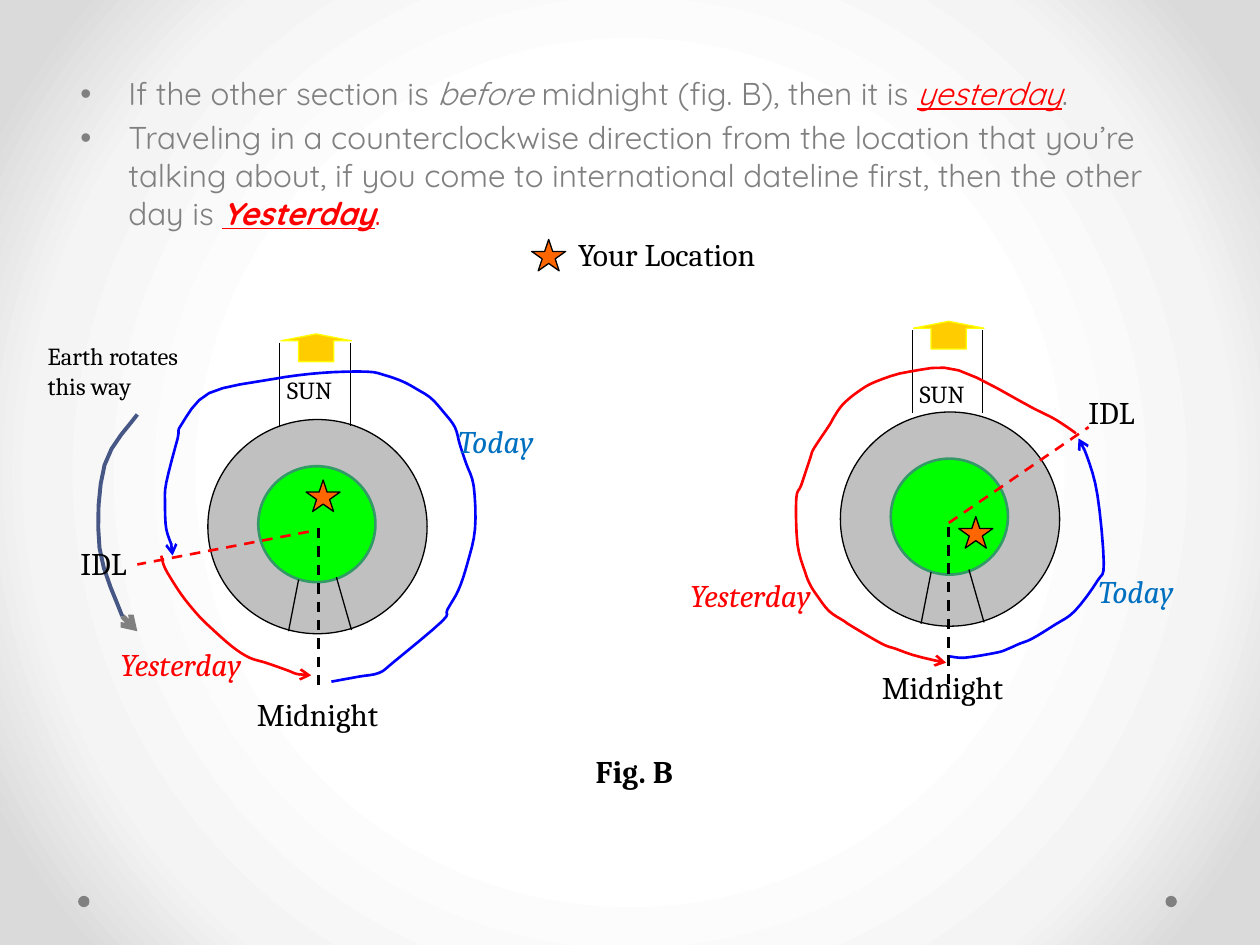
from pptx import Presentation
from pptx.dml.color import RGBColor
from pptx.enum.dml import MSO_LINE
from pptx.enum.shapes import MSO_CONNECTOR, MSO_SHAPE
from pptx.enum.text import MSO_AUTO_SIZE
from pptx.oxml import parse_xml
from pptx.oxml.ns import nsdecls, qn
from pptx.util import Inches, Pt
from lxml.etree import SubElement

hue = RGBColor.from_string


def pen(shape, color, width, dash=False, arrow=False):
    """Set the outline of a shape or connector."""
    shape.line.color.rgb = hue(color)
    shape.line.width = Pt(width)
    if dash:
        shape.line.dash_style = MSO_LINE.DASH
    props = shape._element.spPr
    if arrow:
        SubElement(props.find(qn("a:ln")), qn("a:tailEnd"), type="arrow")
    if props.find(qn("a:effectLst")) is None:
        SubElement(props, qn("a:effectLst"))


def write(para, text, size, font, color, bold=False, italic=False, under=False):
    """Add one run to a paragraph."""
    run = para.add_run()
    run.text = text
    run.font.size = Pt(size)
    run.font.name = font
    run.font.color.rgb = hue(color)
    run.font.bold, run.font.italic, run.font.underline = bold, italic, under


deck = Presentation()
deck.slide_width, deck.slide_height = Inches(10), Inches(7.5)
slide = deck.slides.add_slide(deck.slide_layouts[6])
shapes = slide.shapes

# Background: round gradient
stops = "".join(
    f'<a:gs pos="{pos}000"><a:srgbClr val="{color}"/></a:gs>'
    for pos, color in [(50, "FFFFFF"), (76, "F4F4F4"), (92, "DADADA")])
slide._element.cSld.insert(0, parse_xml(
    f'<p:bg {nsdecls("p", "a")}><p:bgPr><a:gradFill rotWithShape="1"><a:gsLst>{stops}</a:gsLst>'
    '<a:path path="circle"><a:fillToRect l="50000" t="50000" r="50000" b="50000"/></a:path>'
    '</a:gradFill><a:effectLst/></p:bgPr></p:bg>'))

# Corner dots, globes, sun arrows and stars
forms = [(MSO_SHAPE.OVAL, x, 7.11, 0.09, 0.09, "808080", None, 0) for x in (9.25, 0.62)]
globes = [(1.65, 3.33, 2.72), (6.67, 3.27, 2.62)]
for x, y, sun in globes:
    forms += [
        (MSO_SHAPE.OVAL, x, y, 1.74, 1.7, "C0C0C0", "000000", 0.75),
        (MSO_SHAPE.OVAL, x + 0.4, y + 0.37, 0.93, 0.92, "00FF00", "339966", 1.5),
        (MSO_SHAPE.UP_ARROW, x + 0.58, sun - 0.07, 0.56, 0.22, "FFCC00", "FFFF00", 0.75)]
for x, y in [(2.43, 3.81), (4.22, 1.9), (7.61, 4.1)]:
    forms.append((MSO_SHAPE.STAR_5_POINT, x, y, 0.27, 0.25, "FF6600", "000000", 0.75))
for kind, x, y, w, h, fill, edge, width in forms:
    form = shapes.add_shape(kind, Inches(x), Inches(y), Inches(w), Inches(h))
    form.shadow.inherit = False
    form.fill.solid()
    form.fill.fore_color.rgb = hue(fill)
    if edge:
        pen(form, edge, width)
    else:
        form.line.fill.background()
    if kind == MSO_SHAPE.UP_ARROW:
        form.adjustments[0], form.adjustments[1] = 0.5, 0.25

# Straight lines: sun beams, night sector, midnight, date line, rotation tip
lines = []
for x, y, sun in globes:
    for beam in (x + 0.57, x + 1.13):
        lines.append((beam, sun, beam, sun + 0.66, "000000", 0.75, False, False))
    lines += [(x + 0.72, y + 1.27, x + 0.64, y + 1.68, "000000", 0.75, False, False),
              (x + 1.02, y + 1.25, x + 1.14, y + 1.67, "000000", 0.75, False, False)]
lines += [
    (2.53, 4.19, 2.53, 5.44, "000000", 1.5, True, False),
    (7.53, 4.18, 7.53, 5.43, "000000", 1.5, True, False),
    (2.45, 4.22, 1.09, 4.48, "FF0000", 1.5, True, False),
    (7.53, 4.15, 8.64, 3.39, "FF0000", 1.5, True, False),
    (0.97, 4.89, 1.09, 5.01, "808080", 3, False, True)]
for x1, y1, x2, y2, color, width, dash, arrow in lines:
    line = shapes.add_connector(
        MSO_CONNECTOR.STRAIGHT, Inches(x1), Inches(y1), Inches(x2), Inches(y2))
    pen(line, color, width, dash, arrow)

# Day arcs and rotation arc, each a smooth path through its points
arcs = [
    ("FF0000", 1.5, True, [
        (1.28, 4.41), (1.31, 4.51), (1.4, 4.66), (1.47, 4.76), (1.57, 4.88), (1.66, 4.97),
        (1.84, 5.13), (1.98, 5.22), (2.11, 5.26), (2.28, 5.32), (2.36, 5.35), (2.47, 5.36)]),
    ("0000FF", 1.5, True, [
        (2.63, 5.41), (2.85, 5.37), (3.01, 5.34), (3.13, 5.25), (3.51, 4.93), (3.55, 4.84),
        (3.64, 4.68), (3.71, 4.47), (3.77, 4.2), (3.76, 3.86), (3.7, 3.68), (3.65, 3.53),
        (3.61, 3.39), (3.52, 3.27), (3.42, 3.16), (3.31, 3.09), (3.2, 3.03), (3.06, 2.98),
        (2.91, 2.95), (2.55, 2.96), (2.16, 3.01), (1.66, 3.12), (1.44, 3.37), (1.41, 3.48),
        (1.32, 3.83), (1.31, 4), (1.32, 4.2), (1.37, 4.35), (1.37, 4.41)]),
    ("475785", 2.25, False, [(1.09, 3.29), (0.83, 3.69), (0.79, 4.35), (0.97, 4.89)]),
    ("FF0000", 1.5, True, [
        (8.54, 3.44), (8.47, 3.39), (8.36, 3.32), (8.2, 3.24), (7.61, 2.94), (7.22, 2.95),
        (6.95, 3.03), (6.81, 3.11), (6.69, 3.21), (6.62, 3.31), (6.58, 3.38), (6.46, 3.56),
        (6.43, 3.64), (6.36, 3.85), (6.32, 3.96), (6.33, 4.32), (6.39, 4.54), (6.43, 4.64),
        (6.48, 4.72), (6.58, 4.85), (6.7, 4.93), (6.76, 4.97), (7, 5.11), (7.11, 5.15),
        (7.25, 5.2), (7.41, 5.24), (7.51, 5.26)]),
    ("0000FF", 1.5, True, [
        (7.54, 5.21), (7.66, 5.22), (7.91, 5.18), (8, 5.15), (8.09, 5.11), (8.19, 5.07),
        (8.37, 4.96), (8.53, 4.85), (8.71, 4.61), (8.76, 4.47), (8.71, 3.93), (8.63, 3.63),
        (8.56, 3.48)])]
for color, width, arrow, knots in arcs:
    ring = [knots[0]] + knots + [knots[-1]]
    spots = []
    for a, b, c, d in zip(ring, ring[1:], ring[2:], ring[3:]):
        for t in (0.25, 0.5, 0.75, 1):
            # Catmull-Rom spline
            spots.append([Inches(
                q + (r - p) * t / 2 + (2 * p - 5 * q + 4 * r - s) * t ** 2 / 2
                + (3 * q - p - 3 * r + s) * t ** 3 / 2) for p, q, r, s in zip(a, b, c, d)])
    pathway = shapes.build_freeform(Inches(knots[0][0]), Inches(knots[0][1]))
    pathway.add_line_segments(spots, close=False)
    arc = pathway.convert_to_shape()
    arc.shadow.inherit = False
    arc.fill.background()
    pen(arc, color, width, arrow=arrow)

# Bulleted rule
rule = shapes.add_textbox(Inches(0.54), Inches(0.54), Inches(9.01), Inches(1.37)).text_frame
rule.word_wrap = True
gray, red = "808080", "FF0000"
points = [
    [("If the other section is ", gray), ("before", gray, False, True),
     (" midnight (fig. B), then it is ", gray), ("yesterday", red, False, True, True),
     (".", gray)],
    [("Traveling in a counterclockwise direction from the location that you’re talking about, "
      "if you come to international dateline first, then the other day is ", gray),
     ("Yesterday", red, True, True, True), (".", red)]]
for i, runs in enumerate(points):
    para = rule.add_paragraph() if i else rule.paragraphs[0]
    para.space_before = Pt(3.6)
    props = para._p.get_or_add_pPr()
    props.set("marL", str(Inches(0.38)))
    props.set("indent", str(-Inches(0.38)))
    SubElement(props, qn("a:buFont"), typeface="Arial")
    SubElement(props, qn("a:buChar"), char="•")
    for text, *style in runs:
        write(para, text, 18, "Quicksand", *style)

# Labels
labels = [
    ("Your Location", 4.49, 1.82, 1.78, 0.4, 18, "000000"),
    ("Earth rotates this way", 0.28, 2.66, 1.29, 0.81, 14, "000000"),
    ("Fig. B", 4.63, 5.92, 0.86, 0.4, 18, "000000", True)]
for text, w, h, size, color, slant, places in [
        ("Yesterday", 1.18, 0.4, 18, red, True, [(0.86, 5.07), (5.38, 4.52)]),
        ("Today", 0.81, 0.4, 18, "0070C0", True, [(3.54, 3.3), (8.62, 4.49)]),
        ("SUN", 0.62, 0.34, 14, "000000", False, [(2.18, 2.93), (7.2, 2.96)]),
        ("IDL", 0.64, 0.4, 18, "000000", False, [(0.54, 4.27), (8.54, 3.07)]),
        ("Midnight", 1.26, 0.4, 18, "000000", False, [(1.94, 5.47), (6.9, 5.25)])]:
    labels += [(text, x, y, w, h, size, color, False, slant) for x, y in places]
for text, x, y, w, h, size, *style in labels:
    frame = shapes.add_textbox(Inches(x), Inches(y), Inches(w), Inches(h)).text_frame
    frame.word_wrap = h > 0.4
    frame.auto_size = MSO_AUTO_SIZE.SHAPE_TO_FIT_TEXT
    write(frame.paragraphs[0], text, size, "Cambria", *style)

deck.save("out.pptx")
